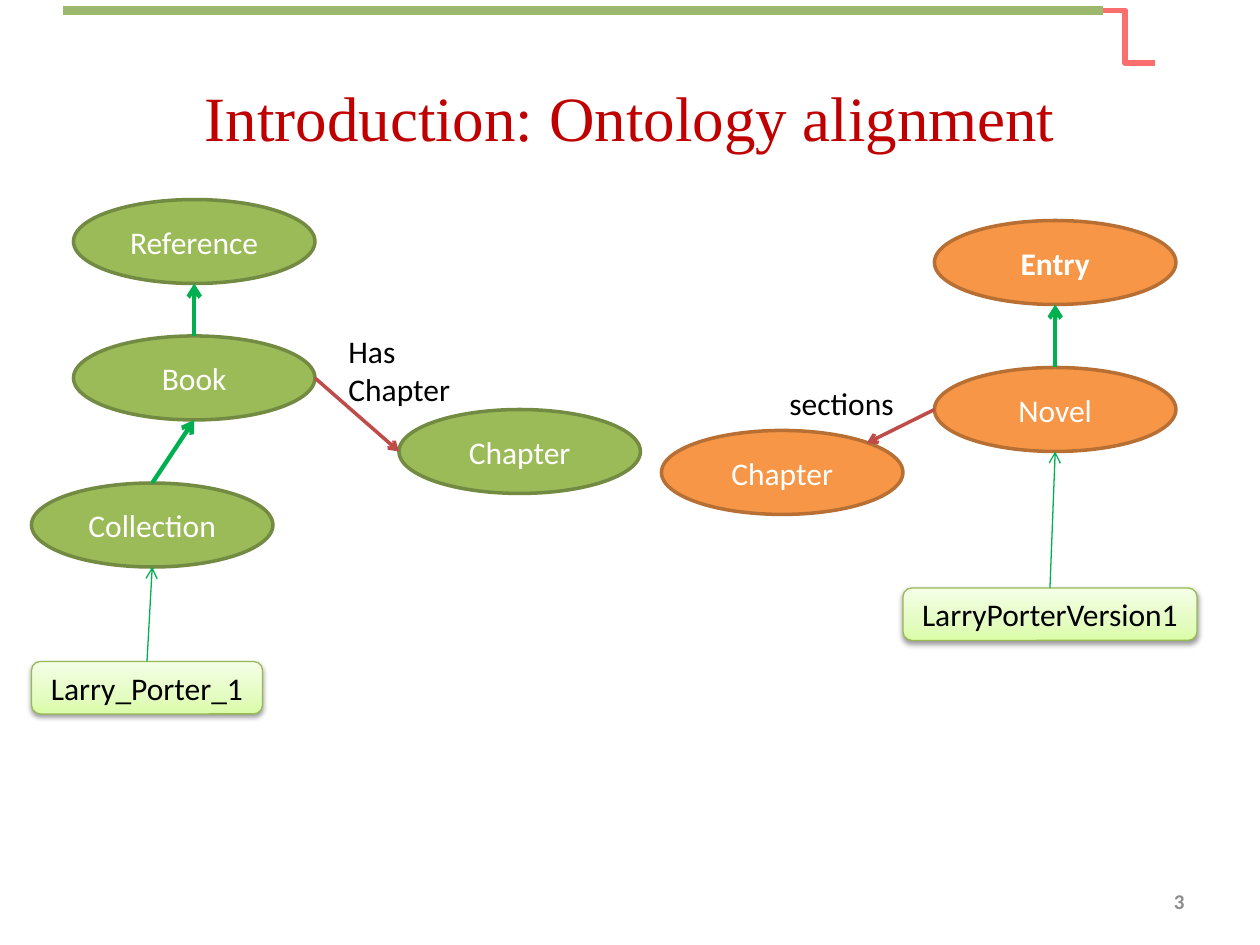
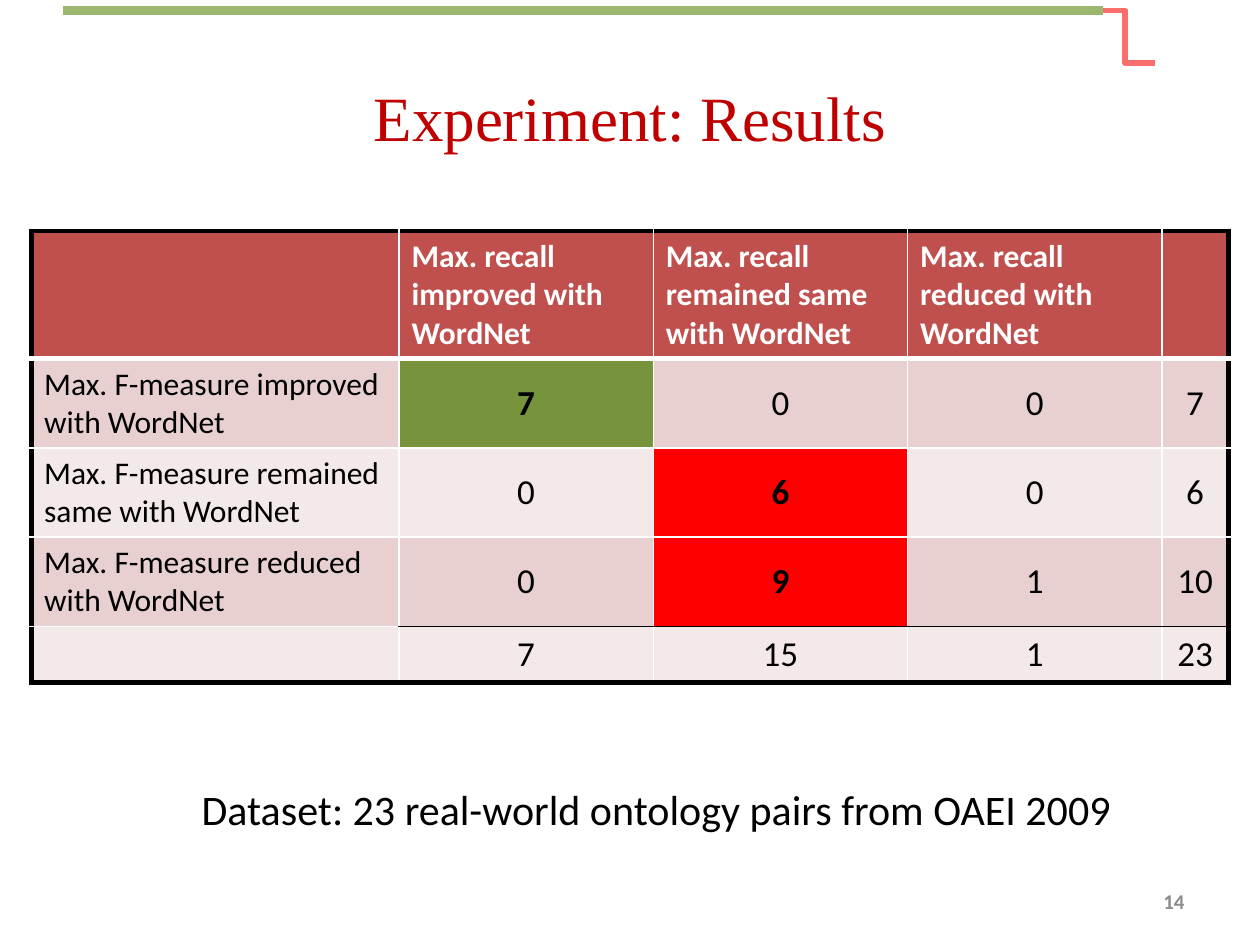
"""Build two slides on ontology alignment: an example diagram and a results table."""
from copy import deepcopy
from dataclasses import dataclass

from lxml import etree
from pptx import Presentation
from pptx.dml.color import RGBColor
from pptx.enum.shapes import MSO_CONNECTOR, MSO_SHAPE
from pptx.enum.text import MSO_ANCHOR, PP_ALIGN
from pptx.oxml.ns import qn
from pptx.util import Pt

STRAIGHT, ELBOW = MSO_CONNECTOR.STRAIGHT, MSO_CONNECTOR.ELBOW
OVAL, ROUNDED = MSO_SHAPE.OVAL, MSO_SHAPE.ROUNDED_RECTANGLE
LEFT, CENTER, RIGHT = PP_ALIGN.LEFT, PP_ALIGN.CENTER, PP_ALIGN.RIGHT
TOP, MIDDLE = MSO_ANCHOR.TOP, MSO_ANCHOR.MIDDLE

BLACK = RGBColor(0x00, 0x00, 0x00)
WHITE = RGBColor(0xFF, 0xFF, 0xFF)
TITLE_RED = RGBColor(0xC0, 0x00, 0x00)
NUMBER_GRAY = RGBColor(0x8C, 0x8C, 0x8C)
BAND_GREEN = RGBColor(0x9C, 0xB8, 0x6E)
BAND_CORAL = RGBColor(0xFA, 0x6E, 0x6E)
NODE_GREEN = RGBColor(0x9B, 0xBB, 0x59)
NODE_GREEN_EDGE = RGBColor(0x73, 0x8A, 0x42)
NODE_ORANGE = RGBColor(0xF7, 0x96, 0x46)
NODE_ORANGE_EDGE = RGBColor(0xB7, 0x6F, 0x34)
SUBCLASS_GREEN = RGBColor(0x00, 0xB0, 0x50)
PROPERTY_RED = RGBColor(0xBF, 0x4C, 0x48)
INSTANCE_EDGE = RGBColor(0x98, 0xB9, 0x55)
INSTANCE_STOPS = (
    (0, RGBColor(0xDA, 0xFD, 0xA7)),
    (0.35, RGBColor(0xE4, 0xFC, 0xC2)),
    (1, RGBColor(0xF5, 0xFF, 0xE7)),
)
HEADER_RED = RGBColor(0xC0, 0x50, 0x4D)
ROW_BANDS = (RGBColor(0xE8, 0xD0, 0xD0), RGBColor(0xF4, 0xE9, 0xE9))
GAIN_GREEN = RGBColor(0x77, 0x93, 0x3C)
ALERT_RED = RGBColor(0xFF, 0x00, 0x00)

BODY_FONT, TITLE_FONT = "Calibri", "Times New Roman"
NODE_WIDTH, NODE_HEIGHT, INSTANCE_HEIGHT = 138, 48, 30


@dataclass(frozen=True)
class TextStyle:
    """Look of a run of text and of its paragraph."""
    size: float = 18
    color: RGBColor = BLACK
    bold: bool = False
    align: PP_ALIGN = LEFT
    anchor: MSO_ANCHOR = TOP
    font: str = BODY_FONT


@dataclass(frozen=True)
class Box:
    """Rectangle in points."""
    left: float
    top: float
    width: float
    height: float

    def at(self, across: float, down: float) -> tuple[float, float]:
        """Return the point at the given fractions of width and height."""
        return self.left + across * self.width, self.top + down * self.height

    def lengths(self) -> tuple[Pt, Pt, Pt, Pt]:
        """Return the four measures as lengths."""
        return Pt(self.left), Pt(self.top), Pt(self.width), Pt(self.height)


@dataclass(frozen=True)
class Concept:
    """Class of an ontology, drawn as an ellipse."""
    text: str
    left: float
    top: float
    bold: bool = False

    @property
    def box(self) -> Box:
        """Return the bounds of the ellipse."""
        return Box(self.left, self.top, NODE_WIDTH, NODE_HEIGHT)


@dataclass(frozen=True)
class Instance:
    """Individual of an ontology, drawn as a rounded rectangle."""
    text: str
    left: float
    top: float
    width: float

    @property
    def box(self) -> Box:
        """Return the bounds of the rectangle."""
        return Box(self.left, self.top, self.width, INSTANCE_HEIGHT)


@dataclass(frozen=True)
class Stroke:
    """Colour and width of a line."""
    color: RGBColor
    width: float


TITLE_STYLE = TextStyle(36, TITLE_RED, False, CENTER, MIDDLE, TITLE_FONT)
NUMBER_STYLE = TextStyle(12, NUMBER_GRAY, True, RIGHT, MIDDLE)
INSTANCE_STYLE = TextStyle(align=CENTER, anchor=MIDDLE)
SUBCLASS = Stroke(SUBCLASS_GREEN, 2.5)
PROPERTY = Stroke(PROPERTY_RED, 2)
MEMBER = Stroke(SUBCLASS_GREEN, 0.75)
THIN, THICK = Stroke(WHITE, 1), Stroke(WHITE, 3)
FRAME, SUM_RULE = Stroke(BLACK, 3), Stroke(BLACK, 1)

RESULTS = (
    ("", "Max. recall improved with WordNet", "Max. recall remained same with WordNet",
     "Max. recall reduced with WordNet", ""),
    ("Max. F-measure improved with WordNet", "7", "0", "0", "7"),
    ("Max. F-measure remained same with WordNet", "0", "6", "0", "6"),
    ("Max. F-measure reduced with WordNet", "0", "9", "1", "10"),
    ("", "7", "15", "1", "23"),
)
HIGHLIGHTS = {(1, 1): GAIN_GREEN, (2, 2): ALERT_RED, (3, 2): ALERT_RED}
COLUMN_WIDTHS = (210, 145.33, 145.33, 145.33, 38)
ROW_HEIGHTS = (73, 51, 51, 51, 32)


def write(text_frame, text: str, style: TextStyle) -> None:
    """Put text in a frame and format its runs."""
    text_frame.text = text
    text_frame.word_wrap = True
    for paragraph in text_frame.paragraphs:
        paragraph.alignment = style.align
        for run in paragraph.runs:
            font = run.font
            font.name, font.size, font.bold = style.font, Pt(style.size), style.bold
            font.color.rgb = style.color


def add_text(slide, box: Box, text: str, style: TextStyle) -> None:
    """Add a text box."""
    text_frame = slide.shapes.add_textbox(*box.lengths()).text_frame
    write(text_frame, text, style)
    text_frame.vertical_anchor = style.anchor


def add_line(slide, start: tuple[float, float], end: tuple[float, float],
             stroke: Stroke, arrow: bool = False, kind: MSO_CONNECTOR = STRAIGHT) -> None:
    """Add a connector without shadow, with an arrowhead if asked."""
    connector = slide.shapes.add_connector(kind, *map(Pt, start + end))
    connector.line.color.rgb = stroke.color
    connector.line.width = Pt(stroke.width)
    properties = connector._element.spPr
    if arrow:
        etree.SubElement(properties.find(qn("a:ln")), qn("a:tailEnd"), type="arrow")
    etree.SubElement(properties, qn("a:effectLst"))


def add_outlined(slide, kind: MSO_SHAPE, box: Box, stroke: Stroke, text: str, style: TextStyle):
    """Add a preset shape with an outline and text, and return it."""
    shape = slide.shapes.add_shape(kind, *box.lengths())
    shape.shadow.inherit = False
    shape.line.color.rgb = stroke.color
    shape.line.width = Pt(stroke.width)
    write(shape.text_frame, text, style)
    shape.text_frame.vertical_anchor = style.anchor
    return shape


def add_concept(slide, concept: Concept, fill: RGBColor, edge: RGBColor) -> None:
    """Add the ellipse of a concept."""
    style = TextStyle(18, WHITE, concept.bold, CENTER, MIDDLE)
    shape = add_outlined(slide, OVAL, concept.box, Stroke(edge, 2), concept.text, style)
    shape.fill.solid()
    shape.fill.fore_color.rgb = fill


def add_instance(slide, instance: Instance) -> None:
    """Add the shaded rectangle of an instance with its soft shadow."""
    shape = add_outlined(slide, ROUNDED, instance.box, Stroke(INSTANCE_EDGE, 0.75),
                         instance.text, INSTANCE_STYLE)
    shape.fill.gradient()
    shape.fill.gradient_angle = 90
    properties = shape._element.spPr
    stop_list = properties.find(qn("a:gradFill")).find(qn("a:gsLst"))
    stop_list.append(deepcopy(stop_list[0]))
    for stop, (position, color) in zip(shape.fill.gradient_stops, INSTANCE_STOPS):
        stop.position = position
        stop.color.rgb = color
    shadow = etree.SubElement(properties.find(qn("a:effectLst")), qn("a:outerShdw"),
                              blurRad=str(Pt(3.1)), dist=str(Pt(1.6)), dir="5400000",
                              rotWithShape="0")
    shade = etree.SubElement(shadow, qn("a:srgbClr"), val=str(BLACK))
    etree.SubElement(shade, qn("a:alpha"), val="38000")


def add_slide(presentation, title: str, number: int):
    """Add a slide with the shared band, title and number."""
    slide = presentation.slides.add_slide(presentation.slide_layouts[6])
    add_line(slide, (660, 36), (626, 6), Stroke(BAND_CORAL, 3.25), kind=ELBOW)
    add_line(slide, (36, 6), (630, 6), Stroke(BAND_GREEN, 4.75))
    add_text(slide, Box(36, 21.6, 648, 90), title, TITLE_STYLE)
    add_text(slide, Box(642, 500.4, 42, 28.8), str(number), NUMBER_STYLE)
    return slide


def add_alignment_slide(presentation) -> None:
    """Add the two example ontologies."""
    slide = add_slide(presentation, "Introduction: Ontology alignment", 3)
    reference, book = Concept("Reference", 42, 114), Concept("Book", 42, 192)
    collection, chapter = Concept("Collection", 18, 276), Concept("Chapter", 228, 234)
    entry, novel = Concept("Entry", 534, 126, True), Concept("Novel", 534, 210)
    section = Concept("Chapter", 378, 246)
    first_copy = Instance("Larry_Porter_1", 18, 378, 132)
    second_copy = Instance("LarryPorterVersion1", 516, 336, 168)

    for concept in (reference, book, collection, chapter):
        add_concept(slide, concept, NODE_GREEN, NODE_GREEN_EDGE)
    for concept in (entry, novel, section):
        add_concept(slide, concept, NODE_ORANGE, NODE_ORANGE_EDGE)
    for instance in (first_copy, second_copy):
        add_instance(slide, instance)

    for child, parent, stroke in (
        (book, reference, SUBCLASS), (collection, book, SUBCLASS), (novel, entry, SUBCLASS),
        (first_copy, collection, MEMBER), (second_copy, novel, MEMBER),
    ):
        add_line(slide, child.box.at(0.5, 0), parent.box.at(0.5, 1), stroke, arrow=True)
    add_line(slide, book.box.at(1, 0.5), chapter.box.at(0, 0.5), PROPERTY, arrow=True)
    add_line(slide, novel.box.at(0, 0.5), section.box.at(0.85, 0.15), PROPERTY, arrow=True)
    add_text(slide, Box(192, 186, 84, 51), "Has\nChapter", TextStyle())
    add_text(slide, Box(444, 216, 84, 29), "sections", TextStyle())


def cell_borders(row: int, column: int) -> dict[str, Stroke]:
    """Return the borders of a results cell by side."""
    last_row, last_column = len(ROW_HEIGHTS) - 1, len(COLUMN_WIDTHS) - 1

    def rule_below(upper_row: int) -> Stroke:
        """Return the line under a row."""
        if upper_row in (-1, last_row):
            return FRAME
        if upper_row == 0:
            return THICK
        return SUM_RULE if upper_row == last_row - 1 and column > 0 else THIN

    return {
        "a:lnL": FRAME if column == 0 else THIN,
        "a:lnR": FRAME if column == last_column else THIN,
        "a:lnT": rule_below(row - 1),
        "a:lnB": rule_below(row),
    }


def format_cell(cell, row: int, column: int) -> None:
    """Write, border and fill one results cell."""
    highlight = HIGHLIGHTS.get((row, column))
    if row == 0:
        style, fill = TextStyle(18, WHITE, True), HEADER_RED
    else:
        fill = highlight or ROW_BANDS[(row - 1) % 2]
        style = TextStyle()
        if column > 0:
            style = TextStyle(20, BLACK, highlight is not None, CENTER, MIDDLE)
    write(cell.text_frame, RESULTS[row][column], style)
    cell.vertical_anchor = style.anchor
    properties = cell._tc.get_or_add_tcPr()
    for side, stroke in cell_borders(row, column).items():
        border = etree.SubElement(properties, qn(side), w=str(Pt(stroke.width)))
        paint = etree.SubElement(border, qn("a:solidFill"))
        etree.SubElement(paint, qn("a:srgbClr"), val=str(stroke.color))
    cell.fill.solid()
    cell.fill.fore_color.rgb = fill


def add_results_slide(presentation) -> None:
    """Add the results table and its data set line."""
    slide = add_slide(presentation, "Experiment: Results", 14)
    box = Box(18, 132, sum(COLUMN_WIDTHS), sum(ROW_HEIGHTS))
    table = slide.shapes.add_table(len(ROW_HEIGHTS), len(COLUMN_WIDTHS), *box.lengths()).table
    for column, width in zip(table.columns, COLUMN_WIDTHS):
        column.width = Pt(width)
    for row_index, height in enumerate(ROW_HEIGHTS):
        table.rows[row_index].height = Pt(height)
        for column_index in range(len(COLUMN_WIDTHS)):
            format_cell(table.cell(row_index, column_index), row_index, column_index)
    add_text(slide, Box(72, 444, 606, 65.5),
             "Dataset: 23 real-world ontology pairs from OAEI 2009", TextStyle(24, align=CENTER))


def main() -> None:
    """Build and save the presentation."""
    presentation = Presentation()
    presentation.slide_width, presentation.slide_height = Pt(720), Pt(540)
    add_alignment_slide(presentation)
    add_results_slide(presentation)
    presentation.save("out.pptx")


if __name__ == "__main__":
    main()
